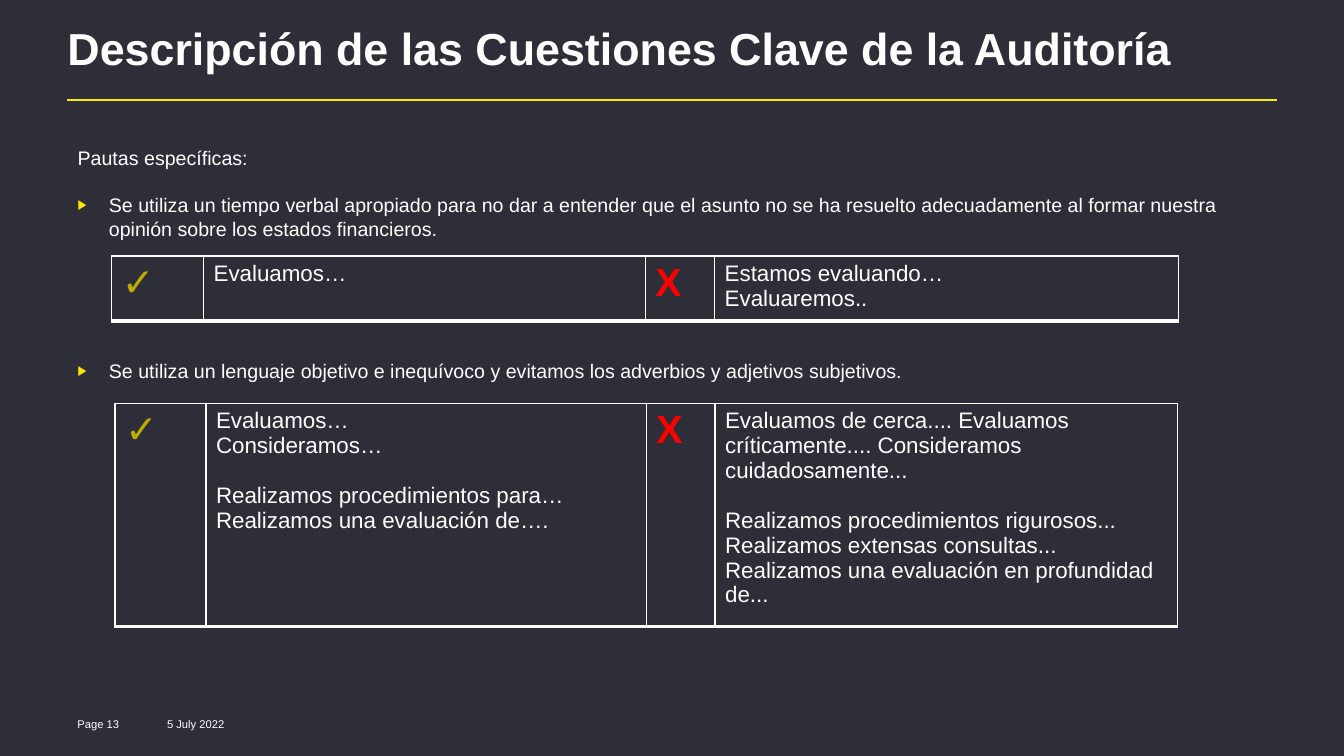
from lxml.etree import SubElement
from pptx import Presentation
from pptx.dml.color import RGBColor
from pptx.enum.shapes import MSO_CONNECTOR as Connector
from pptx.enum.text import MSO_ANCHOR as Anchor, MSO_AUTO_SIZE as AutoSize, PP_ALIGN as Align
from pptx.oxml.ns import qn
from pptx.util import Cm, Pt

TITLE = "Descripción de las Cuestiones Clave de la Auditoría"

# text, bulleted, space before in points
GUIDELINES = [
    ("Pautas específicas:", False, 0),
    ("Se utiliza un tiempo verbal apropiado para no dar a entender que el asunto "
     "no se ha resuelto adecuadamente al formar nuestra opinión sobre los estados "
     "financieros.", True, 17),
    ("Se utiliza un lenguaje objetivo e inequívoco y evitamos los adverbios y "
     "adjetivos subjetivos.", True, 84.5),
]

# Each wording is a list of groups; each group is a list of paragraphs
EXAMPLES = [
    {"left": 2.82, "top": 6.45, "height": 1.63,
     "columns": [2.31, 11.13, 1.75, 11.68],
     "right": [["Evaluamos…"]],
     "wrong": [["Estamos evaluando…", "Evaluaremos.."]]},
    {"left": 2.9, "top": 10.16, "height": 5.28,
     "columns": [2.29, 11.1, 1.73, 11.66],
     "right": [["Evaluamos…", "Consideramos…"],
               ["Realizamos procedimientos para…", "Realizamos una evaluación de…."]],
     "wrong": [["Evaluamos de cerca.... Evaluamos críticamente.... "
                "Consideramos cuidadosamente..."],
               ["Realizamos procedimientos rigurosos... Realizamos extensas "
                "consultas... Realizamos una evaluación en profundidad de..."]]},
]

# text, left, width in cm
FOOTERS = [("5 July 2022", 3.96, 3.3), ("Page 13", 1.7, 1.83)]

COLORS = {"background": "2E2E38", "text": "FFFFFF", "accent": "FFE600",
          "check": "BFAC00", "cross": "FF0000"}
FONTS = {
    "title": {"size": Pt(32), "bold": True, "color": "text"},
    "body": {"size": Pt(14), "bold": False, "color": "text"},
    "footer": {"size": Pt(8), "bold": False, "color": "text"},
    "wording": {"size": Pt(16), "bold": False, "color": "text"},
    "check": {"size": Pt(28), "bold": True, "color": "check"},
    "cross": {"size": Pt(28), "bold": True, "color": "cross"},
}
BORDERS = {"a:lnL": 1, "a:lnR": 1, "a:lnT": 1, "a:lnB": 3}
GROUP_GAP = 18
MARGIN = 1.7
CONTENT_WIDTH = 30.48


def rgb(name):
    return RGBColor.from_string(COLORS[name])


def write(paragraph, text, style):
    run = paragraph.add_run()
    run.text = text
    run.font.name = "Arial"
    for attribute, value in FONTS[style].items():
        if attribute == "color":
            run.font.color.rgb = rgb(value)
        else:
            setattr(run.font, attribute, value)


def place(shape, left, top, width, height):
    lengths = {"left": left, "top": top, "width": width, "height": height}
    for attribute, value in lengths.items():
        setattr(shape, attribute, Cm(value))


def set_bullet(paragraph, bulleted):
    """Give the paragraph a small accent arrow, or clear the inherited bullet."""
    props = paragraph._p.get_or_add_pPr()
    indent = Cm(0.79) if bulleted else 0
    props.set("marL", str(indent))
    props.set("indent", str(-indent))
    if not bulleted:
        SubElement(props, qn("a:buNone"))
        return
    color = SubElement(props, qn("a:buClr"))
    SubElement(color, qn("a:srgbClr"), val=COLORS["accent"])
    SubElement(props, qn("a:buSzPct"), val="70000")
    SubElement(props, qn("a:buFont"), typeface="Arial")
    SubElement(props, qn("a:buChar"), char="▶")


def format_cell(cell):
    props = cell._tc.get_or_add_tcPr()
    for tag, points in BORDERS.items():
        border = SubElement(props, qn(tag), w=str(Pt(points)))
        fill = SubElement(border, qn("a:solidFill"))
        SubElement(fill, qn("a:srgbClr"), val=COLORS["text"])
    cell.fill.solid()
    cell.fill.fore_color.rgb = rgb("background")


def fill_cell(cell, groups, style):
    frame = cell.text_frame
    paragraph = frame.paragraphs[0]
    for group_index, group in enumerate(groups):
        for line_index, line in enumerate(group):
            if group_index or line_index:
                paragraph = frame.add_paragraph()
            if group_index and not line_index:
                paragraph.space_before = Pt(GROUP_GAP)
            write(paragraph, line, style)
    format_cell(cell)


def add_title(slide):
    title = slide.shapes.title
    place(title, MARGIN, 0.74, CONTENT_WIDTH, 1.65)
    frame = title.text_frame
    frame.auto_size = AutoSize.NONE
    frame.vertical_anchor = Anchor.TOP
    for side in ("left", "right", "top", "bottom"):
        setattr(frame, f"margin_{side}", 0)
    heading = frame.paragraphs[0]
    heading.alignment = Align.LEFT
    heading.line_spacing = 0.85
    write(heading, TITLE, "title")

    rule = slide.shapes.add_connector(
        Connector.STRAIGHT, Cm(MARGIN), Cm(2.51), Cm(MARGIN + CONTENT_WIDTH), Cm(2.51))
    rule.line.color.rgb = rgb("accent")
    rule.line.width = Pt(1.5)
    SubElement(rule._element.spPr, qn("a:effectLst"))


def add_guidelines(slide):
    body = slide.placeholders[1]
    place(body, MARGIN, 3.55, 29.36, 6.4)
    frame = body.text_frame
    frame.auto_size = AutoSize.NONE
    frame.vertical_anchor = Anchor.TOP
    for index, (text, bulleted, gap) in enumerate(GUIDELINES):
        paragraph = frame.add_paragraph() if index else frame.paragraphs[0]
        paragraph.space_before = Pt(gap)
        set_bullet(paragraph, bulleted)
        write(paragraph, text, "body")


def add_example(slide, example):
    columns = example["columns"]
    table = slide.shapes.add_table(
        1, len(columns), Cm(example["left"]), Cm(example["top"]),
        Cm(sum(columns)), Cm(example["height"])).table
    table.first_row = table.horz_banding = False
    for column, width in zip(table.columns, columns):
        column.width = Cm(width)
    contents = [([["✓"]], "check"), (example["right"], "wording"),
                ([["X"]], "cross"), (example["wrong"], "wording")]
    for cell, (groups, style) in zip(table.rows[0].cells, contents):
        fill_cell(cell, groups, style)


def add_footer(slide, text, left, width):
    footer = slide.shapes.add_textbox(Cm(left), Cm(17.98), Cm(width), Cm(0.51))
    frame = footer.text_frame
    frame.word_wrap = True
    frame.vertical_anchor = Anchor.MIDDLE
    frame.margin_top = frame.margin_bottom = 0
    write(frame.paragraphs[0], text, "footer")


def main():
    deck = Presentation()
    deck.slide_width, deck.slide_height = Cm(33.87), Cm(19.05)
    slide = deck.slides.add_slide(deck.slide_layouts[1])
    slide.background.fill.solid()
    slide.background.fill.fore_color.rgb = rgb("background")
    add_title(slide)
    for footer in FOOTERS:
        add_footer(slide, *footer)
    add_guidelines(slide)
    for example in EXAMPLES:
        add_example(slide, example)
    deck.save("out.pptx")


if __name__ == "__main__":
    main()
